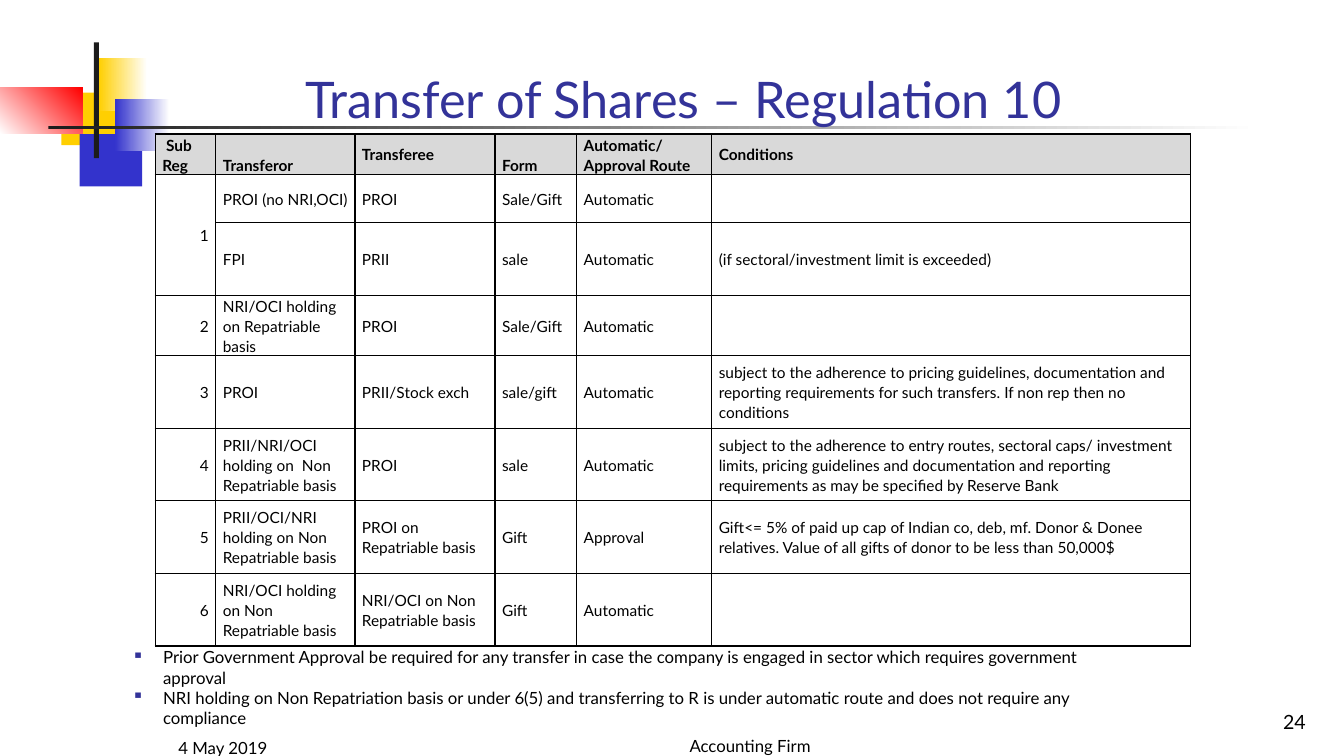
from dataclasses import dataclass

from lxml.etree import SubElement
from pptx import Presentation
from pptx.dml.color import RGBColor
from pptx.enum.shapes import MSO_SHAPE
from pptx.enum.text import MSO_ANCHOR, PP_ALIGN
from pptx.oxml.ns import qn
from pptx.util import Pt

PX = 9144  # EMU per px, 100 px to the inch


@dataclass(frozen=True)
class Theme:
    font: str = "Lato"
    ink: str = "000000"
    title: str = "333399"
    header: str = "D9D9D9"
    yellow: str = "FFCF01"
    blue: str = "3333CC"
    red: str = "FF0000"
    bar: str = "1C1C1C"
    white: str = "FFFFFF"
    title_size: int = 36
    number_size: int = 14
    note_size: int = 12
    table_size: int = 11


THEME = Theme()

COLUMN_WIDTHS = [60, 138, 139, 81, 134, 475]
ROW_HEIGHTS = [40, 48, 72, 60, 72, 72, 72, 72]
CENTRED_HEADERS = ("Transferee", "Conditions")
REGULATIONS = [
    [" Sub Reg", "Transferor", "Transferee", "Form", "Automatic/Approval Route", "Conditions"],
    ["1", "PROI (no NRI,OCI)", "PROI", "Sale/Gift", "Automatic", ""],
    ["", "FPI", "PRII", "sale", "Automatic", "(if sectoral/investment limit is exceeded)"],
    ["2", "NRI/OCI holding on Repatriable basis", "PROI", "Sale/Gift", "Automatic", ""],
    ["3", "PROI", "PRII/Stock exch", "sale/gift", "Automatic",
     "subject to the adherence to pricing guidelines, documentation and reporting "
     "requirements for such transfers. If non rep then no conditions"],
    ["4", "PRII/NRI/OCI holding on  Non Repatriable basis", "PROI", "sale", "Automatic",
     "subject to the adherence to entry routes, sectoral caps/ investment limits, pricing "
     "guidelines and documentation and reporting requirements as may be specified by Reserve Bank"],
    ["5", "PRII/OCI/NRI holding on Non Repatriable basis", "PROI on Repatriable basis",
     "Gift", "Approval",
     "Gift<= 5% of paid up cap of Indian co, deb, mf. Donor & Donee relatives. "
     "Value of all gifts of donor to be less than 50,000$"],
    ["6", "NRI/OCI holding on Non Repatriable basis", "NRI/OCI on Non Repatriable basis",
     "Gift", "Automatic", ""],
]
NOTES = [
    "Prior Government Approval be required for any transfer in case the company is engaged "
    "in sector which requires government approval",
    "NRI holding on Non Repatriation basis or under 6(5) and transferring to R is under "
    "automatic route and does not require any compliance",
]


def px(*lengths):
    return [length * PX for length in lengths]


def rgb(colour):
    return RGBColor.from_string(colour)


def style(paragraph, size, colour=THEME.ink, bold=False, align=PP_ALIGN.LEFT):
    paragraph.alignment = align
    paragraph.font.name = THEME.font
    paragraph.font.size = Pt(size)
    paragraph.font.bold = bold
    paragraph.font.color.rgb = rgb(colour)


def add_text(slide, box, lines, size, colour=THEME.ink, align=PP_ALIGN.LEFT,
             anchor=MSO_ANCHOR.BOTTOM):
    frame = slide.shapes.add_textbox(*px(*box)).text_frame
    frame.word_wrap = True
    frame.vertical_anchor = anchor
    frame.text = "\n".join(lines)
    for paragraph in frame.paragraphs:
        style(paragraph, size, colour, align=align)
    return frame


def add_block(slide, box, start, end=None, angle=0):
    block = slide.shapes.add_shape(MSO_SHAPE.RECTANGLE, *px(*box))
    block.shadow.inherit = False
    block.line.fill.background()
    if end is None:
        block.fill.solid()
        block.fill.fore_color.rgb = rgb(start)
        return
    block.fill.gradient()
    block.fill.gradient_angle = angle
    for stop, colour in zip(block.fill.gradient_stops, (start, end)):
        stop.color.rgb = rgb(colour)


def add_ornament(slide, box):
    left, top, width, _ = box
    t = THEME
    blocks = [
        ((61, 50, 64, 52), t.yellow),
        ((79, 91, 62, 52), t.blue),
        ((98, 16, 48, 52), t.yellow, t.white),
        ((114, 56, 54, 52), t.blue, t.white),
        ((0, 45, 82, 46), t.white, t.red, 45),
        ((93, 0, 5, 115), t.bar),
        ((48, 83, width - 48, 3), t.bar, t.white),
    ]
    for (x, y, w, h), *colours in blocks:
        add_block(slide, (left + x, top + y, w, h), *colours)


def add_borders(cell):
    properties = cell._tc.get_or_add_tcPr()
    for position, side in enumerate(("lnL", "lnR", "lnT", "lnB")):
        line = SubElement(properties, qn("a:" + side), w=str(Pt(1)))
        fill = SubElement(line, qn("a:solidFill"))
        SubElement(fill, qn("a:srgbClr"), val=THEME.ink)
        properties.insert(position, line)  # borders come before the fill


def fill_cell(cell, text, is_header, is_number):
    cell.margin_left, cell.margin_right = px(7, 7)
    cell.margin_top = cell.margin_bottom = 0
    at_bottom = is_header and text not in CENTRED_HEADERS
    cell.vertical_anchor = MSO_ANCHOR.BOTTOM if at_bottom else MSO_ANCHOR.MIDDLE
    cell.text = text
    paragraph = cell.text_frame.paragraphs[0]
    paragraph.line_spacing = 1.07
    style(paragraph, THEME.table_size, bold=is_header,
          align=PP_ALIGN.RIGHT if is_number else PP_ALIGN.LEFT)
    if is_header:
        cell.fill.solid()
        cell.fill.fore_color.rgb = rgb(THEME.header)
    else:
        cell.fill.background()
    add_borders(cell)


def add_regulations(slide, box):
    table = slide.shapes.add_table(len(REGULATIONS), len(COLUMN_WIDTHS), *px(*box)).table
    table.first_row = table.horz_banding = False
    for column, width in zip(table.columns, COLUMN_WIDTHS):
        column.width = width * PX
    for row, height in zip(table.rows, ROW_HEIGHTS):
        row.height = height * PX
    for r, texts in enumerate(REGULATIONS):
        for c, text in enumerate(texts):
            fill_cell(table.cell(r, c), text, is_header=r == 0, is_number=r > 0 and c == 0)
    table.cell(1, 0).merge(table.cell(2, 0))


def add_notes(slide, box):
    frame = add_text(slide, box, NOTES, THEME.note_size, anchor=MSO_ANCHOR.TOP)
    for paragraph in frame.paragraphs:
        properties = paragraph._p.get_or_add_pPr()
        properties.set("marL", str(31 * PX))
        properties.set("indent", str(-31 * PX))
        bullet_colour = SubElement(properties, qn("a:buClr"))
        SubElement(bullet_colour, qn("a:srgbClr"), val=THEME.title)
        SubElement(properties, qn("a:buChar"), char="▪")
        # run defaults follow the bullet
        properties.append(properties.find(qn("a:defRPr")))


def add_footer(slide, box):
    left, top, width, height = box
    add_text(slide, (left, top + 24, 278, height), ["4 May 2019"], THEME.note_size)
    add_text(slide, (left + 366, top + 22, 422, height), ["Accounting Firm"],
             THEME.note_size, align=PP_ALIGN.CENTER)
    add_text(slide, (left + width - 278, top, 278, height), ["24"],
             THEME.number_size, align=PP_ALIGN.RIGHT)


def main():
    deck = Presentation()
    deck.slide_width, deck.slide_height = px(1333, 750)
    slide = deck.slides.add_slide(deck.slide_layouts[6])

    add_ornament(slide, (0, 42, 1248, 143))
    add_footer(slide, (167, 683, 1138, 50))
    add_text(slide, (293, 23, 852, 110), ["Transfer of Shares – Regulation 10"],
             THEME.title_size, THEME.title)
    add_regulations(slide, (154, 133, sum(COLUMN_WIDTHS), sum(ROW_HEIGHTS)))
    add_notes(slide, (121, 637, 1024, 91))

    deck.save("out.pptx")


if __name__ == "__main__":
    main()
